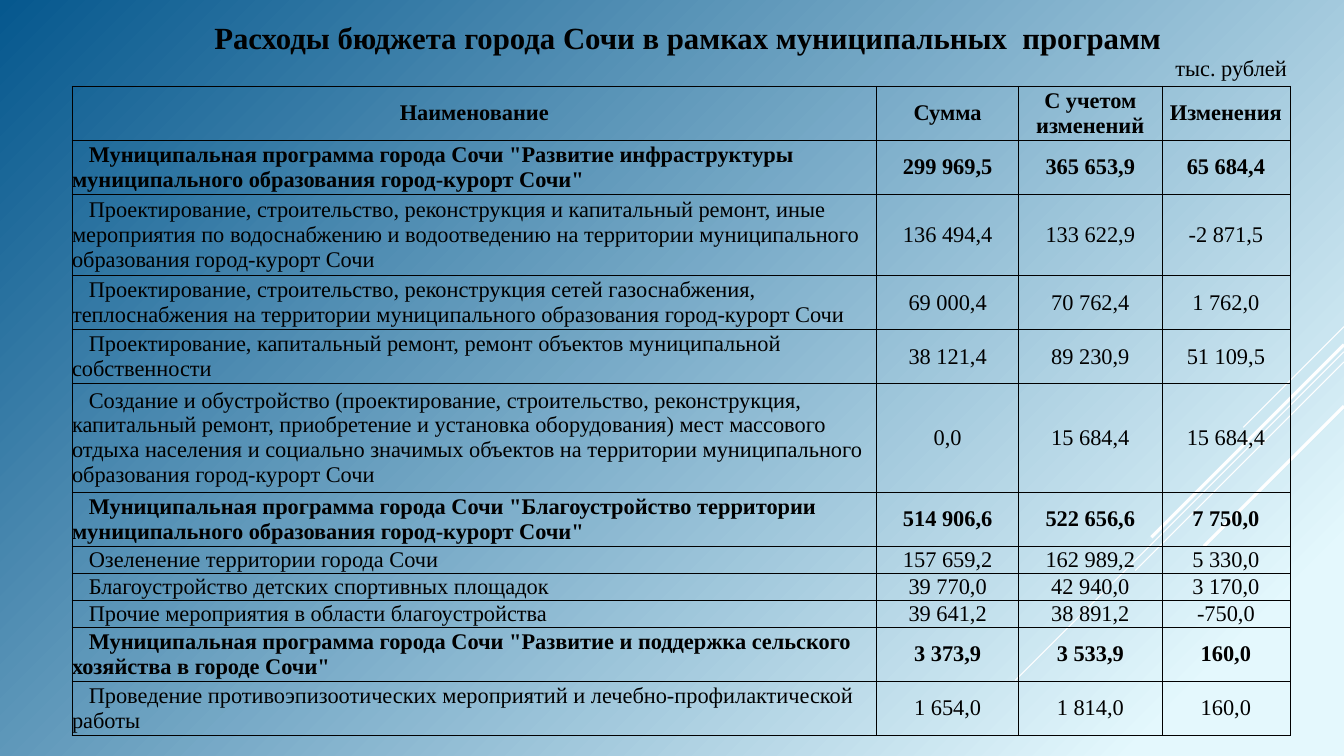
import pptx
import pptx.dml.color
import pptx.enum.dml
import pptx.enum.shapes
import pptx.enum.text
import pptx.oxml
import pptx.oxml.ns
import pptx.util

RGBColor = pptx.dml.color.RGBColor
ALIGN = pptx.enum.text.PP_ALIGN
qn = pptx.oxml.ns.qn

BLACK = RGBColor(0x00, 0x00, 0x00)
WHITE = RGBColor(0xFF, 0xFF, 0xFF)
PALE_BLUE = RGBColor(0xE4, 0xF8, 0xFD)
DEEP_BLUE = RGBColor(0x06, 0x58, 0x8E)

FONT = "Times New Roman"
BODY_SIZE = 16
WIDTH = pptx.util.Inches(13.333)
HEIGHT = pptx.util.Inches(7.5)

COLUMN_WIDTHS = [59.86, 10.58, 10.65, 9.53]
LINE_HEIGHT = 3.58
FIRST_LINE_INDENT = pptx.util.Pt(12)

HEADER = ("Наименование", "Сумма", "С учетом изменений", "Изменения")
# fmt: off
ROWS = [
    (2, True, HEADER),
    (2, True, ('Муниципальная программа города Сочи "Развитие инфраструктуры '
               'муниципального образования город-курорт Сочи"',
               "299 969,5", "365 653,9", "65 684,4")),
    (3, False, ("Проектирование, строительство, реконструкция и капитальный ремонт, иные "
                "мероприятия по водоснабжению и водоотведению на территории муниципального "
                "образования город-курорт Сочи",
                "136 494,4", "133 622,9", "-2 871,5")),
    (2, False, ("Проектирование, строительство, реконструкция сетей газоснабжения, "
                "теплоснабжения на территории муниципального образования город-курорт Сочи",
                "69 000,4", "70 762,4", "1 762,0")),
    (2, False, ("Проектирование, капитальный ремонт, ремонт объектов муниципальной "
                "собственности",
                "38 121,4", "89 230,9", "51 109,5")),
    (4, False, ("Создание и обустройство (проектирование, строительство, реконструкция, "
                "капитальный ремонт, приобретение и установка оборудования) мест массового "
                "отдыха населения и социально значимых объектов на территории муниципального "
                "образования город-курорт Сочи",
                "0,0", "15 684,4", "15 684,4")),
    (2, True, ('Муниципальная программа города Сочи "Благоустройство территории '
               'муниципального образования город-курорт Сочи"',
               "514 906,6", "522 656,6", "7 750,0")),
    (1, False, ("Озеленение территории города Сочи", "157 659,2", "162 989,2", "5 330,0")),
    (1, False, ("Благоустройство детских спортивных площадок",
                "39 770,0", "42 940,0", "3 170,0")),
    (1, False, ("Прочие мероприятия в области благоустройства",
                "39 641,2", "38 891,2", "-750,0")),
    (2, True, ('Муниципальная программа города Сочи "Развитие и поддержка сельского '
               'хозяйства в городе Сочи"',
               "3 373,9", "3 533,9", "160,0")),
    (2, False, ("Проведение противоэпизоотических мероприятий и лечебно-профилактической "
                "работы",
                "1 654,0", "1 814,0", "160,0")),
]
# fmt: on

DIAGONALS = [
    (43.2, 13.33, 0.75),
    (46.53, 43.47, 0.75),
    (47.87, 27.6, 0.75),
    (45.6, 25.47, 2.25),
    (53.73, 18.53, 2.25),
]


def across(percent):
    return round(WIDTH * percent / 100)


def down(percent):
    return round(HEIGHT * percent / 100)


def paint_background(slide):
    fill = slide.background.fill
    fill.gradient()
    stops = zip(fill.gradient_stops, [(0.1, PALE_BLUE), (1, DEEP_BLUE)])
    for stop, (position, color) in stops:
        stop.position = position
        stop.color.rgb = color
    gradient = slide.element.find(".//" + qn("a:gradFill"))
    gradient.replace(gradient.find(qn("a:lin")), pptx.oxml.parse_xml(
        f'<a:path {pptx.oxml.ns.nsdecls("a")} path="circle">'
        '<a:fillToRect l="100000" t="100000"/></a:path>'))


def add_diagonal(slide, top, drop, weight):
    line = slide.shapes.add_connector(
        pptx.enum.shapes.MSO_CONNECTOR.STRAIGHT,
        WIDTH, down(top), WIDTH - down(drop), down(top + drop))
    line.line.color.rgb = WHITE
    line.line.width = pptx.util.Pt(weight)
    pptx.oxml.ns.qn("a:effectLst")
    line.element.spPr.append(
        pptx.oxml.parse_xml(f'<a:effectLst {pptx.oxml.ns.nsdecls("a")}/>'))


def write(frame, text, size, bold, alignment):
    frame.word_wrap = True
    paragraph = frame.paragraphs[0]
    paragraph.text = text
    paragraph.alignment = alignment
    paragraph.font.name = FONT
    paragraph.font.size = pptx.util.Pt(size)
    paragraph.font.bold = bold
    paragraph.font.color.rgb = BLACK
    return paragraph


def add_label(slide, left, top, width, height, text, size, bold, alignment):
    box = slide.shapes.add_textbox(across(left), down(top), across(width), down(height))
    write(box.text_frame, text, size, bold, alignment)
    box.text_frame.auto_size = pptx.enum.text.MSO_AUTO_SIZE.SHAPE_TO_FIT_TEXT


def outline_cell(cell):
    properties = cell._tc.get_or_add_tcPr()
    for index, side in enumerate(["lnL", "lnR", "lnT", "lnB"]):
        properties.insert(index, pptx.oxml.parse_xml(
            f'<a:{side} {pptx.oxml.ns.nsdecls("a")} w="{pptx.util.Pt(0.5)}">'
            f'<a:solidFill><a:srgbClr val="{BLACK}"/></a:solidFill></a:{side}>'))


def fill_cell(cell, text, bold, is_name):
    cell.margin_left = cell.margin_right = cell.margin_top = cell.margin_bottom = 0
    cell.vertical_anchor = pptx.enum.text.MSO_ANCHOR.MIDDLE
    cell.fill.background()
    alignment = ALIGN.LEFT if is_name else ALIGN.CENTER
    paragraph = write(cell.text_frame, text, BODY_SIZE, bold, alignment)
    if is_name:
        paragraph._p.get_or_add_pPr().set("indent", str(FIRST_LINE_INDENT))
    outline_cell(cell)


def add_budget_table(slide, left, top):
    line_total = sum(lines for lines, bold, texts in ROWS)
    table = slide.shapes.add_table(
        len(ROWS), len(COLUMN_WIDTHS), across(left), down(top),
        across(sum(COLUMN_WIDTHS)), down(LINE_HEIGHT * line_total)).table
    table.first_row = table.horz_banding = False
    for column, width in zip(table.columns, COLUMN_WIDTHS):
        column.width = across(width)
    for row_index, (lines, bold, texts) in enumerate(ROWS):
        table.rows[row_index].height = down(LINE_HEIGHT * lines)
        for column_index, text in enumerate(texts):
            is_name = row_index > 0 and column_index == 0
            fill_cell(table.cell(row_index, column_index), text, bold, is_name)


def main():
    presentation = pptx.Presentation()
    presentation.slide_width = WIDTH
    presentation.slide_height = HEIGHT
    slide = presentation.slides.add_slide(presentation.slide_layouts[6])
    paint_background(slide)
    for top, drop, weight in DIAGONALS:
        add_diagonal(slide, top, drop, weight)
    add_label(slide, 15.08, 1.87, 72.17, 6.27,
              "Расходы бюджета города Сочи в рамках муниципальных  программ",
              22, True, ALIGN.CENTER)
    add_label(slide, 86.72, 6.53, 11.33, 4.93, "тыс. рублей", BODY_SIZE, False, ALIGN.LEFT)
    add_budget_table(slide, 5.36, 11.4)
    presentation.save("out.pptx")


if __name__ == "__main__":
    main()
